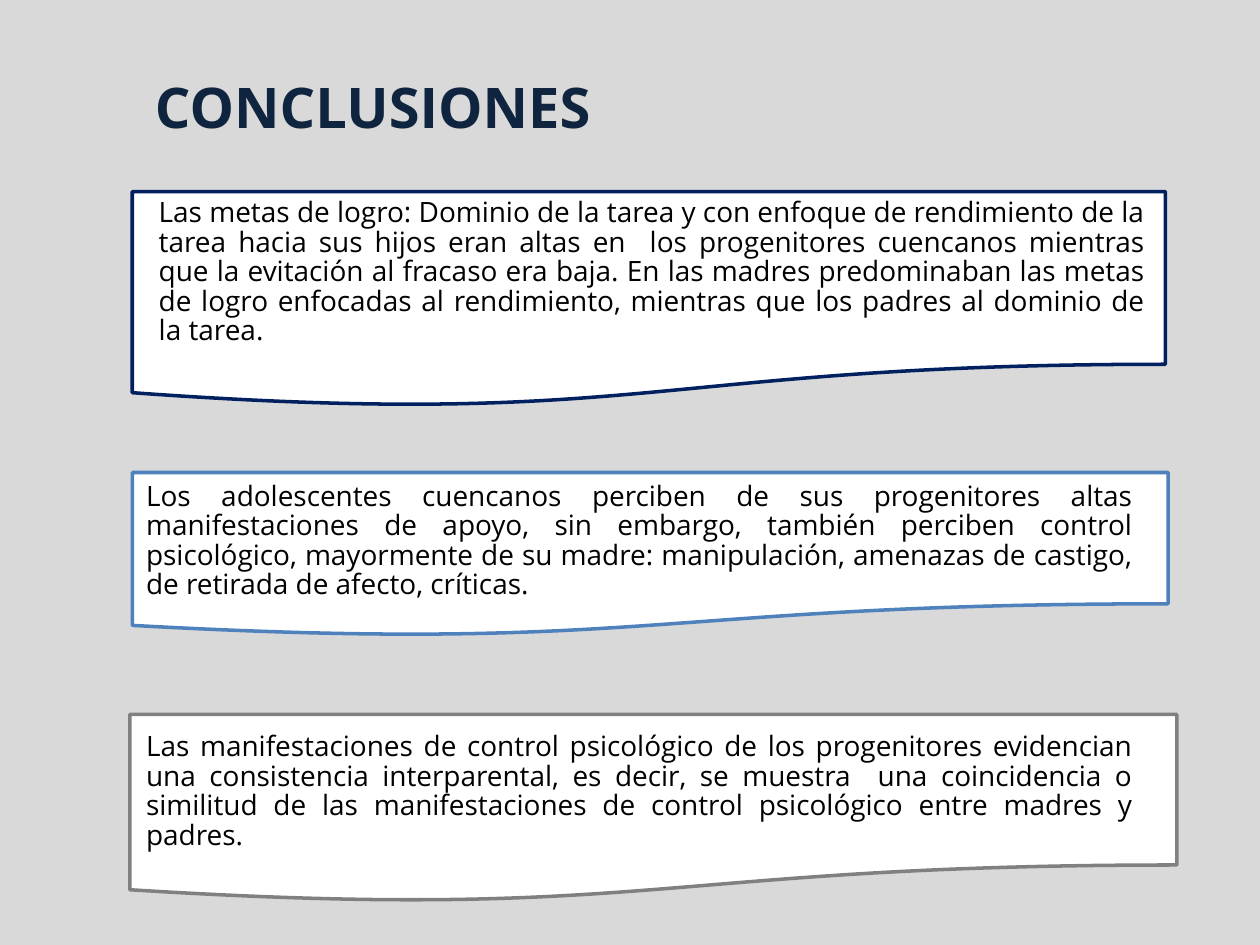
from pptx import Presentation
from pptx.dml.color import RGBColor as Rgb
from pptx.enum.shapes import MSO_SHAPE as Geo
from pptx.enum.text import MSO_ANCHOR as Anchor, MSO_AUTO_SIZE as Fit, PP_ALIGN as Align
from pptx.util import Inches, Pt

deck = Presentation()
deck.slide_width, deck.slide_height = Inches(10), Inches(7.5)
col, row = deck.slide_width / 100, deck.slide_height / 100


def paint(color, value):
    color.rgb = Rgb.from_string(value)


def write(shape, box, text, frame, para, font, ink):
    shape.left, shape.top, shape.width, shape.height = box
    body = shape.text_frame
    body.text = text
    line = body.paragraphs[0]
    for target, style in ((body, frame), (line, para), (line.runs[0].font, font)):
        for key, value in style.items():
            setattr(target, key, value)
    paint(line.runs[0].font.color, ink)


def_frame = dict(word_wrap=True, auto_size=Fit.NONE, vertical_anchor=Anchor.TOP,
                 margin_left=Inches(0.13), margin_right=Inches(0.1),
                 margin_top=Inches(0.05), margin_bottom=Inches(0.05))
head_frame = def_frame | dict(vertical_anchor=Anchor.MIDDLE, margin_left=Inches(0.1))
body_para = dict(alignment=Align.JUSTIFY, line_spacing=0.88, space_before=Pt(0))
head_para = dict(alignment=Align.LEFT)
body_font = dict(name="Open Sans", size=Pt(16))
head_font = dict(name="Open Sans", size=Pt(32), bold=True)

cards = [
    ("002060", (10.5, 20.27, 82, 22.8), (11.3, 20.4, 80.6, 21.47),
     "Las metas de logro: Dominio de la tarea y con enfoque de rendimiento de la tarea "
     "hacia sus hijos eran altas en  los progenitores cuencanos mientras que la evitación "
     "al fracaso era baja. En las madres predominaban las metas de logro enfocadas al "
     "rendimiento, mientras que los padres al dominio de la tarea."),
    ("4F81BD", (10.5, 50, 82.2, 17.33), (10.3, 50.4, 80.6, 16),
     "Los adolescentes cuencanos perciben de sus progenitores altas manifestaciones de "
     "apoyo, sin embargo, también perciben control psicológico, mayormente de su madre: "
     "manipulación, amenazas de castigo, de retirada de afecto, críticas."),
    ("808080", (10.3, 75.6, 83.1, 19.87), (10.3, 76.9, 80.6, 16),
     "Las manifestaciones de control psicológico de los progenitores evidencian una "
     "consistencia interparental, es decir, se muestra  una coincidencia o similitud de las "
     "manifestaciones de control psicológico entre madres y padres."),
]

slide = deck.slides.add_slide(deck.slide_layouts[0])
slide.background.fill.solid()
paint(slide.background.fill.fore_color, "D9D9D9")
title, first = slide.placeholders

for edge, (x, y, w, h), _, _ in reversed(cards):
    card = slide.shapes.add_shape(Geo.FLOWCHART_DOCUMENT, int(x * col), int(y * row),
                                  int(w * col), int(h * row))
    card.shadow.inherit = False
    card.fill.solid()
    paint(card.fill.fore_color, "FFFFFF")
    paint(card.line.color, edge)
    card.line.width = Pt(2)

for holder in (title, first):
    slide.shapes.element.append(holder.element)

head_box = (int(11.3 * col), int(4.8 * row), int(61.4 * col), int(12.93 * row))
write(title, head_box, "CONCLUSIONES", head_frame, head_para, head_font, "0F243E")

for rank, (_, _, (x, y, w, h), text) in enumerate(cards):
    box = int(x * col), int(y * row), int(w * col), int(h * row)
    shape = slide.shapes.add_textbox(*box) if rank else first
    write(shape, box, text, def_frame, body_para, body_font, "000000")

deck.save("out.pptx")
